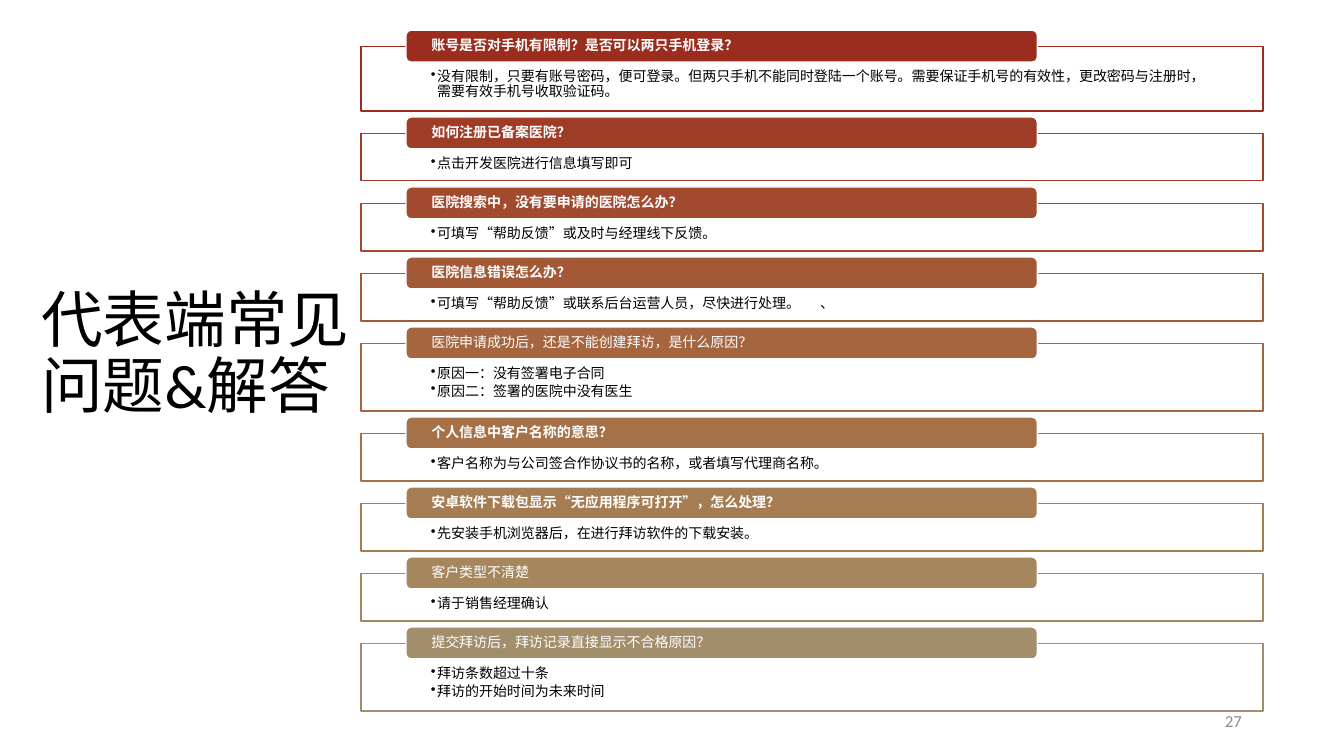
import pptx
import pptx.util
import pptx.dml.color
import pptx.enum.shapes
import pptx.enum.text
import pptx.oxml.ns
from lxml import etree
from pptx.util import Pt

TITLE = "代表端常见问题&解答"
PAGE_NUMBER = "27"
FAQ = [
    ("账号是否对手机有限制？是否可以两只手机登录？", True, 46,
     ["没有限制，只要有账号密码，便可登录。但两只手机不能同时登陆一个账号。需要保证手机号的有效性，更改密码与注册时，需要有效手机号收取验证码。"]),
    ("如何注册已备案医院？", True, 34, ["点击开发医院进行信息填写即可"]),
    ("医院搜索中，没有要申请的医院怎么办？", True, 34, ["可填写“帮助反馈”或及时与经理线下反馈。"]),
    ("医院信息错误怎么办？", True, 34, ["可填写“帮助反馈”或联系后台运营人员，尽快进行处理。\t、"]),
    ("医院申请成功后，还是不能创建拜访，是什么原因？", False, 48.3,
     ["原因一：没有签署电子合同", "原因二：签署的医院中没有医生"]),
    ("个人信息中客户名称的意思？", True, 34, ["客户名称为与公司签合作协议书的名称，或者填写代理商名称。"]),
    ("安卓软件下载包显示“无应用程序可打开”，怎么处理？", True, 34, ["先安装手机浏览器后，在进行拜访软件的下载安装。"]),
    ("客户类型不清楚", False, 34, ["请于销售经理确认"]),
    ("提交拜访后，拜访记录直接显示不合格原因？", False, 48.3,
     ["拜访条数超过十条", "拜访的开始时间为未来时间"]),
]
THEME = {
    "font": "Calibri",
    "title_size": 44, "faq_size": 10, "page_size": 12,
    "ink": "000000", "paper": "FFFFFF", "page": "8C8C8C",
    "accents": ["9B2D1F", "9E3C26", "A14A2E", "A35836", "A4653F",
                "A57148", "A67D52", "A5865D", "A28E6A"],
}
ANSWER_LEFT, ANSWER_WIDTH, FIRST_TOP, GAP = 257.8, 644.4, 33.2, 16
QUESTION_LEFT, QUESTION_WIDTH, QUESTION_HEIGHT, QUESTION_RISE = 290, 451, 22.8, 11.6
BULLET_INDENT = 4.5


def rgb(colour):
    return pptx.dml.color.RGBColor.from_string(colour)


def style(paragraph, size, colour, bold=False):
    paragraph.font.name = THEME["font"]
    paragraph.font.size = Pt(size)
    paragraph.font.color.rgb = rgb(colour)
    paragraph.font.bold = bold


def set_frame(frame, anchor, insets):
    frame.word_wrap = True
    frame.auto_size = pptx.enum.text.MSO_AUTO_SIZE.NONE
    frame.vertical_anchor = anchor
    frame.margin_left, frame.margin_top, frame.margin_right, frame.margin_bottom = map(Pt, insets)


def add_panel(slide, kind, box, fill, line):
    panel = slide.shapes.add_shape(kind, *map(Pt, box))
    panel.shadow.inherit = False
    panel.fill.solid()
    panel.fill.fore_color.rgb = rgb(fill)
    panel.line.color.rgb = rgb(line)
    panel.line.width = Pt(1)
    return panel


def add_bullet(paragraph):
    properties = paragraph._p.get_or_add_pPr()
    properties.set("marL", str(Pt(BULLET_INDENT)))
    properties.set("indent", str(-Pt(BULLET_INDENT)))
    etree.SubElement(properties, pptx.oxml.ns.qn("a:buChar"), char="•")


def add_tab_stop(paragraph, position):
    stops = etree.SubElement(paragraph._p.get_or_add_pPr(), pptx.oxml.ns.qn("a:tabLst"))
    etree.SubElement(stops, pptx.oxml.ns.qn("a:tab"), pos=str(Pt(position)), algn="l")


def add_answers(slide, answers, top, height, accent):
    panel = add_panel(slide, pptx.enum.shapes.MSO_SHAPE.RECTANGLE,
                      (ANSWER_LEFT, top, ANSWER_WIDTH, height), THEME["paper"], accent)
    frame = panel.text_frame
    set_frame(frame, pptx.enum.text.MSO_ANCHOR.TOP, (50, 16.4, 50, 5.7))
    for index, answer in enumerate(answers):
        paragraph = frame.add_paragraph() if index else frame.paragraphs[0]
        paragraph.text = answer
        paragraph.alignment = pptx.enum.text.PP_ALIGN.LEFT
        paragraph.line_spacing = 0.9
        paragraph.space_after = Pt(1.8)
        add_bullet(paragraph)
        if "\t" in answer:
            add_tab_stop(paragraph, 278)
        style(paragraph, THEME["faq_size"], THEME["ink"])


def add_question(slide, question, bold, top, accent):
    panel = add_panel(slide, pptx.enum.shapes.MSO_SHAPE.ROUNDED_RECTANGLE,
                      (QUESTION_LEFT, top, QUESTION_WIDTH, QUESTION_HEIGHT), accent, THEME["paper"])
    set_frame(panel.text_frame, pptx.enum.text.MSO_ANCHOR.MIDDLE, (17, 0, 17, 0))
    paragraph = panel.text_frame.paragraphs[0]
    paragraph.text = question
    paragraph.alignment = pptx.enum.text.PP_ALIGN.LEFT
    paragraph.line_spacing = 0.9
    style(paragraph, THEME["faq_size"], THEME["paper"], bold)


def add_title(slide):
    title = slide.shapes.title
    title.left, title.top, title.width, title.height = map(Pt, (22.3, 37.4, 265.7, 433.4))
    set_frame(title.text_frame, pptx.enum.text.MSO_ANCHOR.MIDDLE, (7.2, 3.6, 7.2, 3.6))
    paragraph = title.text_frame.paragraphs[0]
    paragraph.text = TITLE
    paragraph.alignment = pptx.enum.text.PP_ALIGN.LEFT
    paragraph.line_spacing = 0.9
    style(paragraph, THEME["title_size"], THEME["ink"])


def add_page_number(slide):
    page = slide.shapes.add_textbox(*map(Pt, (678.2, 500.4, 216, 28.8)))
    set_frame(page.text_frame, pptx.enum.text.MSO_ANCHOR.MIDDLE, (7.2, 3.6, 7.2, 3.6))
    paragraph = page.text_frame.paragraphs[0]
    paragraph.text = PAGE_NUMBER
    paragraph.alignment = pptx.enum.text.PP_ALIGN.RIGHT
    style(paragraph, THEME["page_size"], THEME["page"])


def main():
    deck = pptx.Presentation()
    deck.slide_width, deck.slide_height = Pt(960), Pt(540)
    slide = deck.slides.add_slide(deck.slide_layouts[5])
    add_title(slide)
    add_page_number(slide)
    top = FIRST_TOP
    for (question, bold, height, answers), accent in zip(FAQ, THEME["accents"]):
        add_answers(slide, answers, top, height, accent)
        add_question(slide, question, bold, top - QUESTION_RISE, accent)
        top += height + GAP
    deck.save("out.pptx")


if __name__ == "__main__":
    main()
